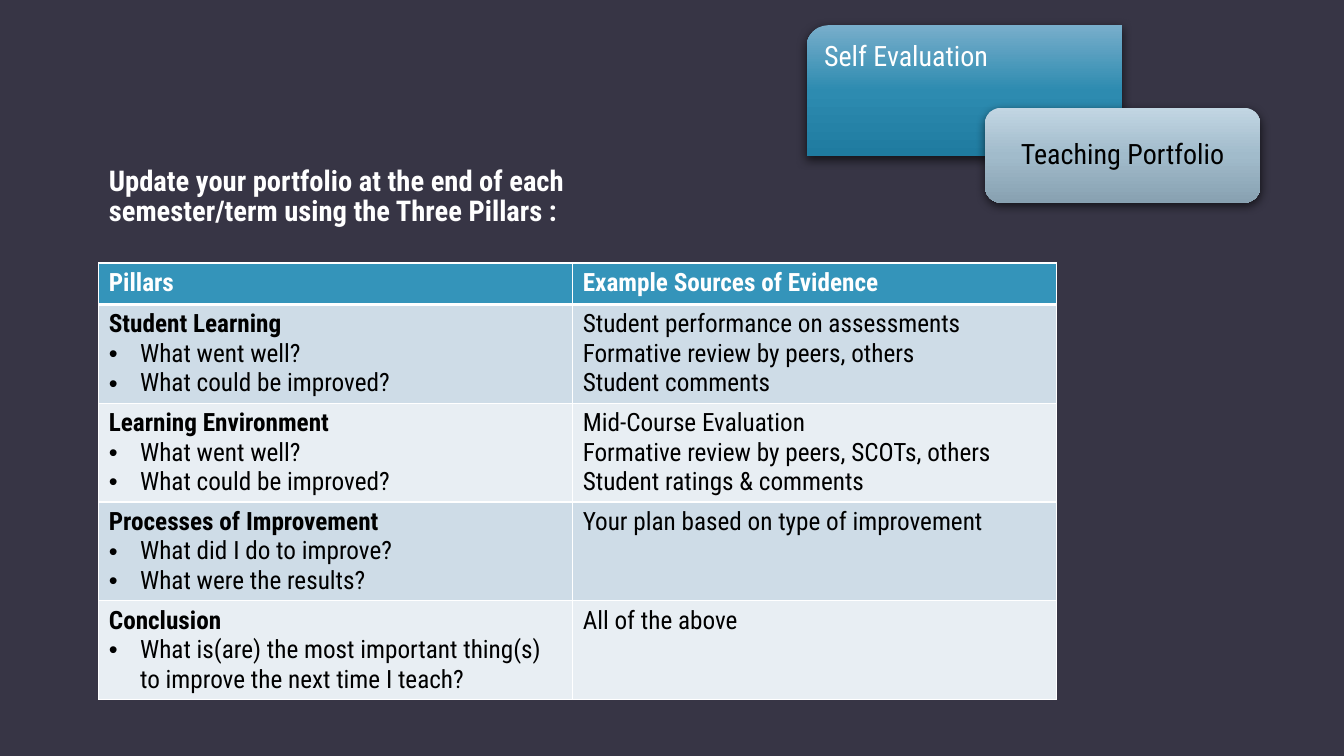
import dataclasses

import lxml.etree
import pptx
import pptx.dml.color
import pptx.enum.shapes
import pptx.enum.text
import pptx.oxml
import pptx.oxml.ns
import pptx.util

Inches = pptx.util.Inches
Pt = pptx.util.Pt
SHAPE = pptx.enum.shapes.MSO_SHAPE
ALIGN = pptx.enum.text.PP_ALIGN
ANCHOR = pptx.enum.text.MSO_ANCHOR
NS = pptx.oxml.ns.nsdecls("a")
FONT = "Roboto Condensed"
COLORS = {
    "background": "373545",
    "white": "FFFFFF",
    "black": "000000",
    "header": "3494BA",
    "dark_band": "CEDCE7",
    "light_band": "E8EEF3",
}


@dataclasses.dataclass
class Card:
    text: str
    kind: SHAPE
    box: tuple[float, float, float, float]
    adjustments: tuple[float, ...]
    gradient: tuple[str, str, str]
    color: str
    inset: float
    align: ALIGN
    anchor: ANCHOR


@dataclasses.dataclass
class Pillar:
    name: str
    questions: list[str]
    evidence: list[str]


CARDS = [
    Card("Self Evaluation", SHAPE.SNIP_ROUND_RECTANGLE, (8, 0.25, 3.13, 1.3), (0.167, 0),
         ("78AECB", "2D8BB0", "1F7BA0"), "white", 0.11, ALIGN.LEFT, ANCHOR.TOP),
    Card("Teaching Portfolio", SHAPE.ROUNDED_RECTANGLE, (9.77, 1.07, 2.73, 0.94), (0.167,),
         ("C2D6E3", "A1BBCB", "88A1B1"), "black", 0.13, ALIGN.CENTER, ANCHOR.MIDDLE),
]
HEADINGS = ["Pillars", "Example Sources of Evidence"]
REVIEW = ["What went well?", "What could be improved?"]
PILLARS = [
    Pillar("Student Learning", REVIEW,
           ["Student performance on assessments", "Formative review by peers, others",
            "Student comments"]),
    Pillar("Learning Environment", REVIEW,
           ["Mid-Course Evaluation", "Formative review by peers, SCOTs, others",
            "Student ratings & comments"]),
    Pillar("Processes of Improvement", ["What did I do to improve?", "What were the results?"],
           ["Your plan based on type of improvement"]),
    Pillar("Conclusion",
           ["What is(are) the most important thing(s) to improve the next time I teach?"],
           ["All of the above"]),
]


def rgb(name: str) -> pptx.dml.color.RGBColor:
    return pptx.dml.color.RGBColor.from_string(COLORS[name])


def write(tf, text: str, *, size: float = 18, color: str = "black", bold: bool = False,
          align: ALIGN = ALIGN.LEFT, spacing: float = 1, bullet: bool = False) -> None:
    p = tf.paragraphs[0] if not tf.text else tf.add_paragraph()
    p.alignment = align
    p.line_spacing = spacing
    p.space_before = p.space_after = Pt(0)
    if bullet:
        pPr = p._p.get_or_add_pPr()
        pPr.set("marL", str(Inches(0.31)))
        pPr.set("indent", str(-Inches(0.31)))
        pPr.append(pptx.oxml.parse_xml(f'<a:buFont {NS} typeface="Arial"/>'))
        pPr.append(pptx.oxml.parse_xml(f'<a:buChar {NS} char="•"/>'))
    r = p.add_run()
    r.text = text
    r.font.name = FONT
    r.font.size = Pt(size)
    r.font.bold = bold
    r.font.color.rgb = rgb(color)


def add_card(s, card: Card) -> None:
    sp = s.shapes.add_shape(card.kind, *map(Inches, card.box))
    for i, value in enumerate(card.adjustments):
        sp.adjustments[i] = value
    sp.line.fill.background()
    sp.fill.gradient()
    sp.fill.gradient_angle = 270
    stops = sp._element.spPr.find(f".//{pptx.oxml.ns.qn('a:gsLst')}")
    for stop in list(stops):
        stops.remove(stop)
    for i, color in enumerate(card.gradient):
        stops.append(pptx.oxml.parse_xml(
            f'<a:gs {NS} pos="{i * 50000}"><a:srgbClr val="{color}"/></a:gs>'))
    sp._element.spPr.append(pptx.oxml.parse_xml(
        f'<a:effectLst {NS}><a:outerShdw blurRad="{Pt(7)}" dist="{Pt(2.2)}" dir="5400000" '
        f'algn="ctr" rotWithShape="0"><a:srgbClr val="{COLORS["black"]}">'
        '<a:alpha val="63000"/></a:srgbClr></a:outerShdw></a:effectLst>'))
    tf = sp.text_frame
    tf.word_wrap = True
    tf.vertical_anchor = card.anchor
    tf.margin_left = tf.margin_right = tf.margin_top = tf.margin_bottom = Inches(card.inset)
    write(tf, card.text, size=20, color=card.color, align=card.align, spacing=0.9)


def style_cell(cell, fill: str, top: float = 1, bottom: float = 1) -> None:
    tcPr = cell._tc.get_or_add_tcPr()
    for side, width in (("L", 1), ("R", 1), ("T", top), ("B", bottom)):
        line = lxml.etree.SubElement(tcPr, pptx.oxml.ns.qn(f"a:ln{side}"), w=str(Pt(width)))
        line.append(pptx.oxml.parse_xml(
            f'<a:solidFill {NS}><a:srgbClr val="{COLORS["white"]}"/></a:solidFill>'))
    cell.fill.solid()
    cell.fill.fore_color.rgb = rgb(fill)


def add_pillar_table(s) -> None:
    row_height = 0.98
    table = s.shapes.add_table(len(PILLARS) + 1, 2, Inches(0.98), Inches(2.61), Inches(9.5),
                               Inches(0.41 + row_height * len(PILLARS))).table
    for column, width in zip(table.columns, (4.7, 4.8)):
        column.width = Inches(width)
    table.rows[0].height = Inches(0.41)
    for i, heading in enumerate(HEADINGS):
        cell = table.cell(0, i)
        style_cell(cell, "header", bottom=3)
        write(cell.text_frame, heading, color="white", bold=True)
    for i, pillar in enumerate(PILLARS, 1):
        table.rows[i].height = Inches(row_height)
        left, right = table.cell(i, 0), table.cell(i, 1)
        for cell in (left, right):
            style_cell(cell, "dark_band" if i % 2 else "light_band", top=3 if i == 1 else 1)
        write(left.text_frame, pillar.name, bold=True)
        for question in pillar.questions:
            write(left.text_frame, question, bullet=True)
        for source in pillar.evidence:
            write(right.text_frame, source)


def add_intro(s) -> None:
    body = s.placeholders[1]
    body.left, body.top, body.width, body.height = map(Inches, (0.98, 1.6, 5.35, 0.94))
    tf = body.text_frame
    tf.word_wrap = True
    tf.auto_size = pptx.enum.text.MSO_AUTO_SIZE.NONE
    tf.vertical_anchor = ANCHOR.TOP
    write(tf, "Update your portfolio at the end of each semester/term using the Three Pillars :",
          size=20.4, color="white", bold=True, spacing=0.9)


def main() -> None:
    prs = pptx.Presentation()
    prs.slide_width, prs.slide_height = Inches(13.33), Inches(7.5)
    s = prs.slides.add_slide(prs.slide_layouts.get_by_name("Section Header"))
    s.background.fill.solid()
    s.background.fill.fore_color.rgb = rgb("background")
    title = s.shapes.title._element
    title.getparent().remove(title)
    add_intro(s)
    for card in CARDS:
        add_card(s, card)
    add_pillar_table(s)
    prs.save("out.pptx")


if __name__ == "__main__":
    main()
